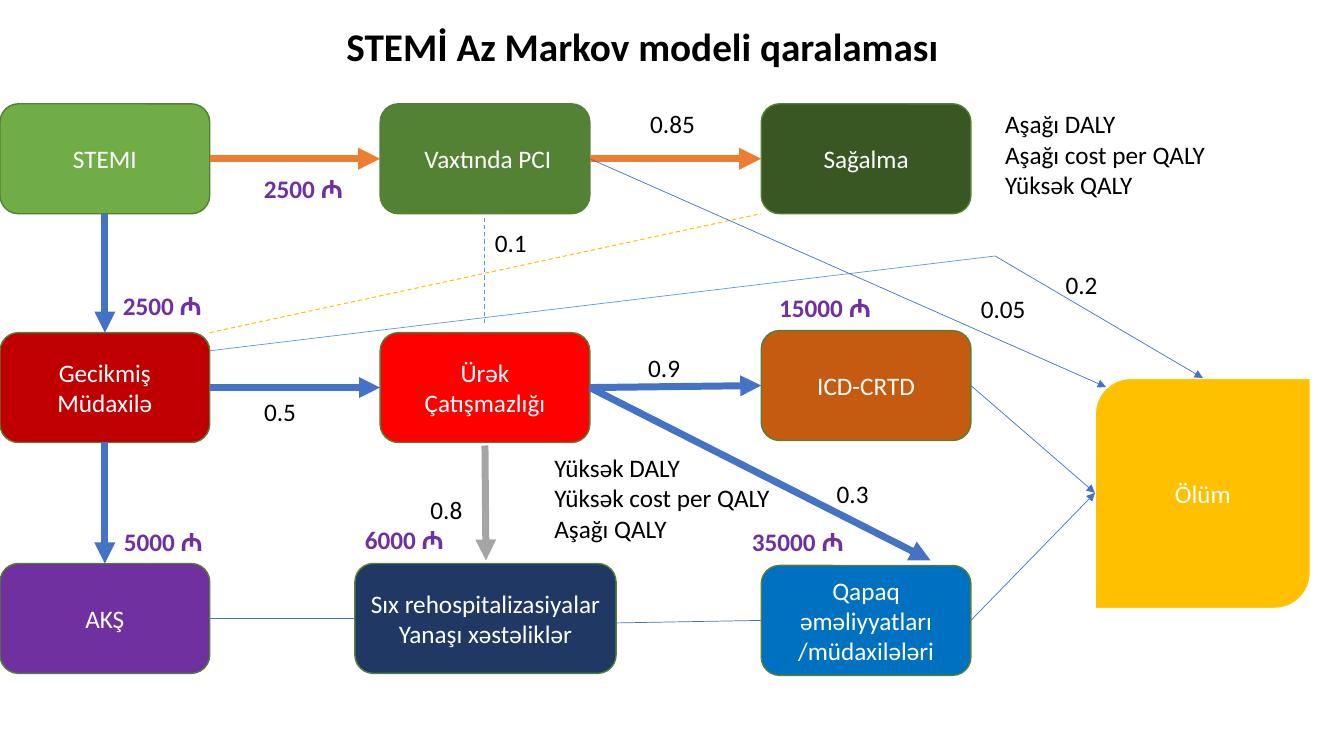
from lxml import etree
from pptx import Presentation
from pptx.dml.color import RGBColor
from pptx.enum import dml, shapes, text
from pptx.oxml.ns import qn
from pptx.util import Inches, Pt

COLORS = {
    "white": "FFFFFF", "black": "000000", "border": "538035",
    "light green": "70AD47", "green": "548235", "dark green": "385723",
    "red": "FF0000", "dark red": "C00000", "rust": "C55A11",
    "navy": "203864", "purple": "7030A0", "azure": "0070C0",
    "gold": "FFC000", "orange": "ED7D31", "blue": "4472C4",
    "sky": "5B9BD5", "gray": "A5A5A5",
}
BOX_WIDTH, BOX_HEIGHT = 2.08, 1.09
COLUMNS = (0, 3.77, 7.55)
TOP, LEFT, BOTTOM, RIGHT = range(4)

# name: (text, left, top, width, fill)
STATES = {
    "stemi": ("STEMI", COLUMNS[0], 1.03, BOX_WIDTH, "light green"),
    "pci": (" Vaxtında PCI", COLUMNS[1], 1.03, BOX_WIDTH, "green"),
    "recovery": ("Sağalma", COLUMNS[2], 1.03, BOX_WIDTH, "dark green"),
    "late": ("Gecikmiş\nMüdaxilə", COLUMNS[0], 3.3, BOX_WIDTH, "dark red"),
    "failure": ("Ürək\nÇatışmazlığı", COLUMNS[1], 3.3, BOX_WIDTH, "red"),
    "icd": ("ICD-CRTD", COLUMNS[2], 3.28, BOX_WIDTH, "rust"),
    "bypass": ("AKŞ", COLUMNS[0], 5.59, BOX_WIDTH, "purple"),
    "readmission": ("Sıx rehospitalizasiyalar\nYanaşı xəstəliklər", 3.52, 5.59, 2.59, "navy"),
    "valve": ("Qapaq əməliyyatları\n/müdaxilələri", COLUMNS[2], 5.61, BOX_WIDTH, "azure"),
}
DEATH = ("Ölüm", 10.86, 3.75, 2.14, 2.29)
DEATH_LEFT, DEATH_TOP = (10.86, 4.89), (11.93, 3.75)
BEND = (9.87, 2.54)

# start, end, color, width, arrow, dashed; an end is (state, side) or (x, y)
LINKS = [
    (("stemi", RIGHT), ("pci", LEFT), "orange", 5.25, True, False),
    (("pci", RIGHT), ("recovery", LEFT), "orange", 5.25, True, False),
    (("stemi", BOTTOM), ("late", TOP), "blue", 5, True, False),
    (("late", RIGHT), ("failure", LEFT), "blue", 5, True, False),
    (("failure", RIGHT), ("icd", LEFT), "blue", 5, True, False),
    ((4.81, 4.42), (4.82, 5.56), "gray", 5, True, False),
    ((2.08, 3.3), (7.55, 2.12), "gold", 0.75, False, True),
    ((4.81, 2.16), (4.81, 3.23), "sky", 0.75, False, True),
    (("late", BOTTOM), ("bypass", TOP), "blue", 5, True, False),
    (("failure", RIGHT), (9.23, 5.56), "blue", 5, True, False),
    ((2.08, 3.48), BEND, "sky", 0.5, False, False),
    (BEND, DEATH_TOP, "blue", 0.5, True, False),
    (("icd", RIGHT), DEATH_LEFT, "blue", 0.5, True, False),
    (("valve", RIGHT), DEATH_LEFT, "blue", 0.5, True, False),
    (("pci", RIGHT), (10.97, 3.84), "blue", 0.5, True, False),
    (("bypass", RIGHT), ("readmission", LEFT), "blue", 0.5, False, False),
    ((6.11, 6.18), ("valve", LEFT), "blue", 0.5, False, False),
]

TITLE = ("STEMİ Az Markov modeli qaralaması", 2.52, 0.17, 7.7, 0.57)
# text, left, top, width, height
LABELS = [
    ("Yüksək DALY\nYüksək cost per QALY\nAşağı QALY", 5.4, 4.44, 2.59, 1.01),
    ("Aşağı DALY\nAşağı cost per QALY\nYüksək QALY", 9.87, 1.03, 2.39, 1.01),
    ("0.1", 4.81, 2.21, 1.04, 0.4),
    ("0.05", 9.63, 2.86, 1.04, 0.4),
    ("0.2", 10.47, 2.62, 1.11, 0.4),
    ("0.5", 2.52, 3.88, 1.11, 0.4),
    ("0.9", 6.33, 3.45, 1.11, 0.4),
    ("0.8", 4.17, 4.85, 1.11, 0.4),
    ("0.3", 8.2, 4.7, 0.84, 0.4),
]
CENTERED_LABEL = ("0.85", 6.21, 1.03, 0.92, 0.4)
# amount, left, top, width
COSTS = [
    ("2500 ", 2.52, 1.67, 1), ("5000 ", 1.13, 5.17, 1),
    ("2500 ", 1.12, 2.83, 1), ("6000 ", 3.52, 5.15, 1),
    ("35000 ", 7.36, 5.17, 1.16), ("15000 ", 7.63, 2.85, 1.16),
]


def rgb(name):
    return RGBColor.from_string(COLORS[name])


def format_run(run, color, **values):
    for key, value in {"size": Pt(18), "name": "Calibri", **values}.items():
        setattr(run.font, key, value)
    run.font.color.rgb = rgb(color)


def write(shape, content, color, centered=False, **values):
    frame = shape.text_frame
    frame.word_wrap = True
    frame.text = content
    for paragraph in frame.paragraphs:
        paragraph.alignment = text.PP_ALIGN.CENTER if centered else text.PP_ALIGN.LEFT
        format_run(paragraph.runs[0], color, **values)


def add_box(slide, kind, content, bounds, fill, border, border_width):
    box = slide.shapes.add_shape(kind, *map(Inches, bounds))
    box.shadow.inherit = False
    box.fill.solid()
    box.fill.fore_color.rgb = rgb(fill)
    box.line.color.rgb = rgb(border)
    box.line.width = Pt(border_width)
    box.text_frame.vertical_anchor = text.MSO_ANCHOR.MIDDLE
    write(box, content, "white", centered=True)
    return box


def add_label(slide, content, left, top, width, height, color="black", **values):
    label = slide.shapes.add_textbox(*map(Inches, (left, top, width, height)))
    write(label, content, color, **values)
    label.text_frame.auto_size = text.MSO_AUTO_SIZE.SHAPE_TO_FIT_TEXT
    return label


def add_link(slide, boxes, start, end, color, width, arrow, dashed):
    corners = [(0, 0) if point[0] in boxes else point for point in (start, end)]
    link = slide.shapes.add_connector(
        shapes.MSO_CONNECTOR.STRAIGHT, *(Inches(value) for point in corners for value in point))
    for point, connect in ((start, link.begin_connect), (end, link.end_connect)):
        if point[0] in boxes:
            connect(boxes[point[0]], point[1])
    link.line.color.rgb = rgb(color)
    link.line.width = Pt(width)
    if dashed:
        link.line.dash_style = dml.MSO_LINE.DASH
    properties = link._element.spPr
    if arrow:
        etree.SubElement(properties.find(qn("a:ln")), qn("a:tailEnd"), type="triangle")
    etree.SubElement(properties, qn("a:effectLst"))


def main():
    presentation = Presentation()
    presentation.slide_width, presentation.slide_height = Inches(13.33), Inches(7.5)
    slide = presentation.slides.add_slide(presentation.slide_layouts[6])

    boxes = {}
    for name, (content, left, top, width, fill) in STATES.items():
        boxes[name] = add_box(slide, shapes.MSO_SHAPE.ROUNDED_RECTANGLE, content,
                              (left, top, width, BOX_HEIGHT), fill, "border", 1)
    add_box(slide, shapes.MSO_SHAPE.ROUND_2_DIAG_RECTANGLE, DEATH[0], DEATH[1:],
            "gold", "white", 1.5)
    for link in LINKS:
        add_link(slide, boxes, *link)

    add_label(slide, *TITLE, centered=True, size=Pt(28), bold=True)
    add_label(slide, *CENTERED_LABEL, centered=True)
    for label in LABELS:
        add_label(slide, *label)
    for amount, left, top, width in COSTS:
        cost = add_label(slide, amount, left, top, width, 0.4, "purple", bold=True)
        sign = cost.text_frame.paragraphs[0].add_run()
        sign.text = "₼"
        format_run(sign, "purple", name="Arial", bold=True)

    presentation.save("out.pptx")


if __name__ == "__main__":
    main()
